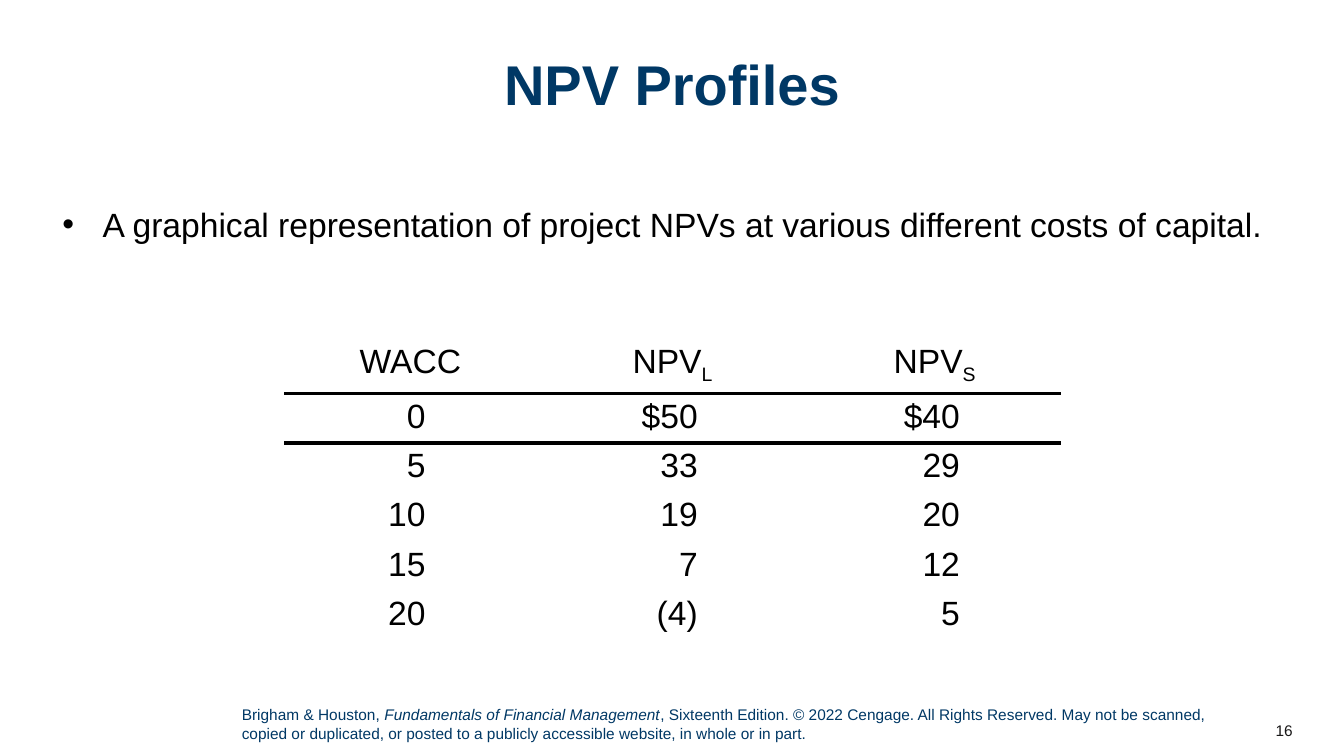
from dataclasses import dataclass

from lxml.etree import SubElement
from pptx import Presentation
from pptx.dml.color import RGBColor
from pptx.enum.text import MSO_ANCHOR as Anchor, PP_ALIGN as Align
from pptx.oxml.ns import qn
from pptx.util import Inches, Pt

COLORS = {"navy": "003865", "black": "000000", "gray": "181717"}
FONT = "Arial"


@dataclass
class Column:
    width: float
    heading: str
    subscript: str
    values: tuple[str, ...]
    right_margin: float


@dataclass
class TextBlock:
    left: float
    top: float
    width: float
    height: float
    runs: tuple[tuple[str, bool], ...]
    size: int
    color: str
    align: Align = Align.LEFT
    anchor: Anchor = Anchor.TOP


COLUMNS = (
    Column(2.5, "WACC", "", ("0", "5", "10", "15", "20"), 1.1),
    Column(2.7, "NPV", "L", ("$50", "33", "19", "7", "(4)"), 1.1),
    Column(2.5, "NPV", "S", ("$40", "29", "20", "12", "5"), 1.0),
)
DEFINITION = TextBlock(0.52, 1.93, 12.29, 1.2, ((
    "A graphical representation of project NPVs at various different costs of capital.", False),),
    24, "black")
COPYRIGHT = TextBlock(2.3, 6.95, 9.8, 0.47, (
    ("Brigham & Houston, ", False),
    ("Fundamentals of Financial Management", True),
    (", Sixteenth Edition. © 2022 Cengage. All Rights Reserved. May not be scanned, copied or "
     "duplicated, or posted to a publicly accessible website, in whole or in part.", False),
), 11, "navy")
PAGE_NUMBER = TextBlock(12.12, 7.05, 0.8, 0.4, (("16", False),), 11, "gray",
                        Align.RIGHT, Anchor.MIDDLE)


def set_font(paragraph, size: int, color: str) -> None:
    paragraph.font.name = FONT
    paragraph.font.size = Pt(size)
    paragraph.font.color.rgb = RGBColor.from_string(COLORS[color])


def add_text(slide, block: TextBlock, bulleted: bool = False) -> None:
    frame = slide.shapes.add_textbox(Inches(block.left), Inches(block.top),
                                     Inches(block.width), Inches(block.height)).text_frame
    frame.word_wrap = True
    frame.vertical_anchor = block.anchor
    paragraph = frame.paragraphs[0]
    paragraph.alignment = block.align
    for text, italic in block.runs:
        run = paragraph.add_run()
        run.text = text
        if italic:
            run.font.italic = True
    if bulleted:
        frame.margin_top = Inches(0.09)
        properties = paragraph._p.get_or_add_pPr()
        properties.set("marL", str(Inches(0.4)))
        properties.set("indent", str(Inches(-0.4)))
        SubElement(properties, qn("a:buFont"), typeface=FONT)
        SubElement(properties, qn("a:buChar"), char="•")
    set_font(paragraph, block.size, block.color)


def add_rule(cell, side: str) -> None:
    line = SubElement(cell._tc.get_or_add_tcPr(), qn(f"a:{side}"), w=str(Pt(3)))
    fill = SubElement(line, qn("a:solidFill"))
    SubElement(fill, qn("a:srgbClr"), val=COLORS["black"])


def fill_cell(cell, text: str, align: Align, right_margin: float, rule: str = "",
              subscript: str = "") -> None:
    cell.margin_left, cell.margin_right = Inches(0.01), Inches(right_margin)
    cell.margin_top, cell.margin_bottom = Inches(0.04), Inches(0.05)
    if rule:
        add_rule(cell, rule)
    cell.fill.background()
    paragraph = cell.text_frame.paragraphs[0]
    paragraph.alignment = align
    paragraph.add_run().text = text
    if subscript:
        run = paragraph.add_run()
        run.text = subscript
        run.font._element.set("baseline", "-25000")
    set_font(paragraph, 24, "black")


def add_npv_table(slide, columns: tuple[Column, ...]) -> None:
    row_count = 1 + len(columns[0].values)
    table = slide.shapes.add_table(row_count, len(columns), Inches(2.82), Inches(3.36),
                                   Inches(sum(column.width for column in columns)),
                                   Inches(0.42 * row_count)).table
    table.first_row = table.horz_banding = False
    SubElement(table._tbl.tblPr, qn("a:tableStyleId")).text = "{2D5ABB26-0587-4C30-8999-92F81FD0307C}"
    table._tbl.tblPr.remove(table._tbl.tblPr[0])
    for index, column in enumerate(columns):
        table.columns[index].width = Inches(column.width)
        fill_cell(table.cell(0, index), column.heading, Align.CENTER, 0.01, "lnB",
                  column.subscript)
        for row, value in enumerate(column.values, start=1):
            fill_cell(table.cell(row, index), value, Align.RIGHT, column.right_margin,
                      "lnT" if row == 1 else "")


def add_title(slide, text: str) -> None:
    title = slide.shapes.title
    title.left, title.top = Inches(0.52), Inches(0.52)
    title.width, title.height = Inches(12.29), Inches(1.33)
    title.text_frame.text = text
    title.text_frame.vertical_anchor = Anchor.TOP
    heading = title.text_frame.paragraphs[0]
    heading.alignment = Align.CENTER
    heading.line_spacing = 0.9
    set_font(heading, 40, "navy")
    heading.font.bold = True


def main() -> None:
    deck = Presentation()
    deck.slide_width, deck.slide_height = Inches(13.33), Inches(7.5)
    slide = deck.slides.add_slide(deck.slide_layouts[5])
    add_title(slide, "NPV Profiles")
    add_text(slide, DEFINITION, bulleted=True)
    add_npv_table(slide, COLUMNS)
    add_text(slide, COPYRIGHT)
    add_text(slide, PAGE_NUMBER)
    deck.save("out.pptx")


if __name__ == "__main__":
    main()
